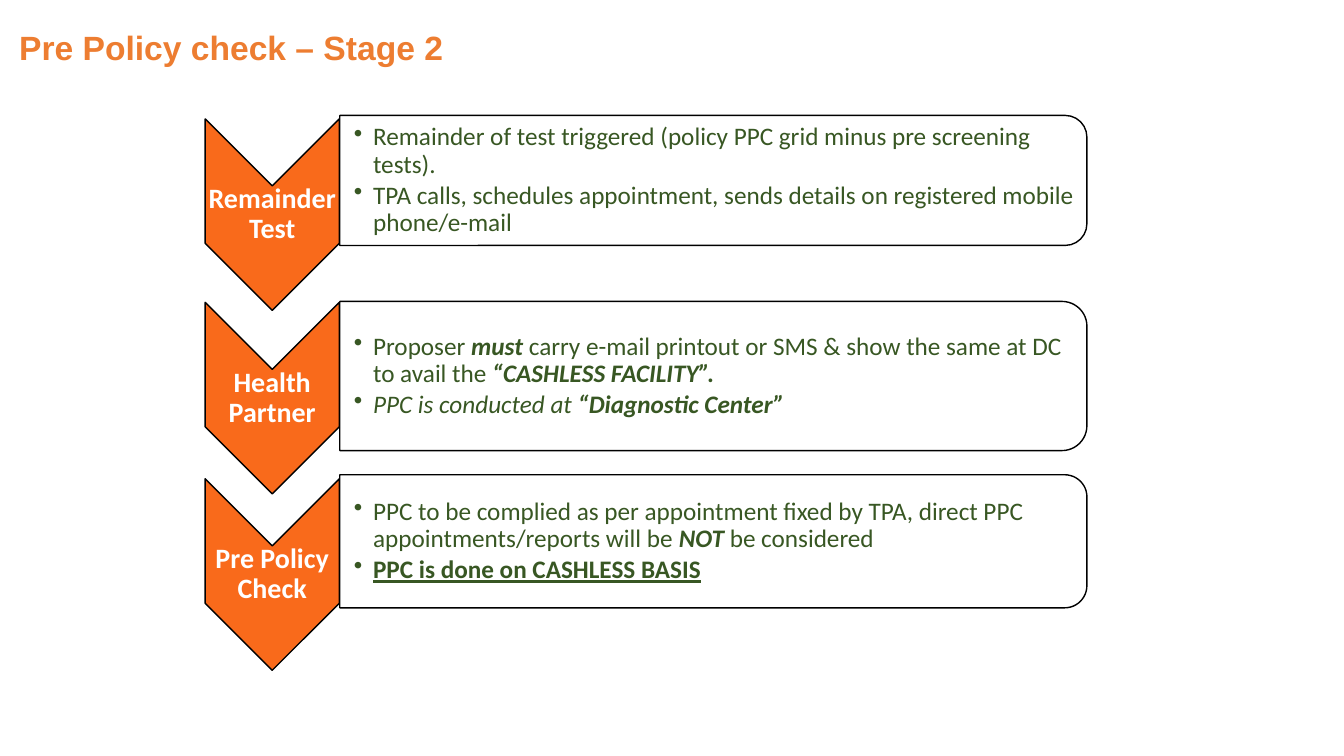
import pptx
import pptx.dml.color
import pptx.enum.shapes
import pptx.enum.text
import pptx.oxml.ns
import pptx.util
from lxml import etree

Inches = pptx.util.Inches
Pt = pptx.util.Pt
RGBColor = pptx.dml.color.RGBColor
MSO_SHAPE = pptx.enum.shapes.MSO_SHAPE
PP_ALIGN = pptx.enum.text.PP_ALIGN

TITLE_ORANGE = RGBColor(0xED, 0x7D, 0x31)
ARROW_ORANGE = RGBColor(0xF9, 0x6A, 0x1B)
TEXT_GREEN = RGBColor(0x38, 0x57, 0x23)
WHITE = RGBColor(0xFF, 0xFF, 0xFF)
BLACK = RGBColor(0, 0, 0)

ARROW_WIDTH, ARROW_HEIGHT = 1.33, 1.9
ARROW_CENTER = 2.7
PANEL_LEFT, PANEL_WIDTH = 3.37, 7.41

# Emphasis marks: b bold, i italic, u underlined.
# Each stage: label, arrow middle, panel middle, panel height, bullets.
STAGES = [
    ("Remainder Test", 2.13, 1.79, 1.29, [
        [("Remainder of test triggered (policy PPC grid minus pre screening tests).", "")],
        [("TPA calls, schedules appointment, sends details on registered mobile phone/e-mail", "")],
    ]),
    ("Health Partner", 3.95, 3.73, 1.48, [
        [("Proposer ", ""), ("must ", "bi"),
         ("carry e-mail printout or SMS & show the same at DC to avail the ", ""),
         ("“CASHLESS FACILITY”.", "bi")],
        [("PPC is conducted at ", "i"), ("“Diagnostic Center”", "bi")],
    ]),
    ("Pre Policy Check", 5.7, 5.37, 1.32, [
        [("PPC to be complied as per appointment fixed by TPA, direct PPC appointments/reports will be ", ""),
         ("NOT ", "bi"), ("be considered", "")],
        [("PPC is done on CASHLESS BASIS", "bu")],
    ]),
]


class StageSlide:
    def __init__(self, slide):
        self.slide = slide

    def style_run(self, run, font, size, color, marks):
        run.font.name = font
        run.font.size = Pt(size)
        run.font.color.rgb = color
        run.font.bold = "b" in marks
        run.font.italic = "i" in marks
        run.font.underline = "u" in marks

    def set_frame(self, frame, left, top, right, bottom):
        """Wrap the text, centre it vertically and set the insets."""
        frame.word_wrap = True
        frame.auto_size = pptx.enum.text.MSO_AUTO_SIZE.NONE
        frame.vertical_anchor = pptx.enum.text.MSO_ANCHOR.MIDDLE
        frame.margin_left, frame.margin_top = Inches(left), Inches(top)
        frame.margin_right, frame.margin_bottom = Inches(right), Inches(bottom)

    def title(self, text):
        title = self.slide.shapes.title
        title.left, title.top = Inches(0.12), Inches(0.14)
        title.width, title.height = Inches(12), Inches(0.7)
        frame = title.text_frame
        frame.text = text
        self.set_frame(frame, 0.07, 0.04, 0.07, 0.04)
        paragraph = frame.paragraphs[0]
        paragraph.alignment = PP_ALIGN.LEFT
        paragraph.line_spacing = 0.9
        self.style_run(paragraph.runs[0], "Arial", 24, TITLE_ORANGE, "b")

    def turned_shape(self, kind, center, middle, width, height, fill):
        """Draw a shape turned a quarter; width and height are as seen."""
        shape = self.slide.shapes.add_shape(
            kind, Inches(center - height / 2), Inches(middle - width / 2),
            Inches(height), Inches(width))
        shape.rotation = 90
        shape.shadow.inherit = False
        shape.fill.solid()
        shape.fill.fore_color.rgb = fill
        shape.line.color.rgb = BLACK
        shape.line.width = Pt(1)

    def text_box(self, left, middle, width, height, inset):
        box = self.slide.shapes.add_textbox(
            Inches(left), Inches(middle - height / 2), Inches(width), Inches(height))
        self.set_frame(box.text_frame, inset, 0.01, 0.01, 0.01)
        return box.text_frame

    def arrow(self, label, middle):
        self.turned_shape(MSO_SHAPE.CHEVRON, ARROW_CENTER, middle,
                          ARROW_WIDTH, ARROW_HEIGHT, ARROW_ORANGE)
        frame = self.text_box(ARROW_CENTER - ARROW_WIDTH / 2, middle, ARROW_WIDTH, 0.57, 0.01)
        frame.text = label
        paragraph = frame.paragraphs[0]
        paragraph.alignment = PP_ALIGN.CENTER
        paragraph.line_spacing = 0.9
        self.style_run(paragraph.runs[0], "Calibri", 20, WHITE, "b")

    def panel(self, middle, height, bullets):
        self.turned_shape(MSO_SHAPE.ROUND_2_SAME_RECTANGLE, PANEL_LEFT + PANEL_WIDTH / 2,
                          middle, PANEL_WIDTH, height, WHITE)
        frame = self.text_box(PANEL_LEFT, middle, PANEL_WIDTH - 0.06, height - 0.13, 0.14)
        for index, pieces in enumerate(bullets):
            paragraph = frame.add_paragraph() if index else frame.paragraphs[0]
            self.bullet(paragraph)
            paragraph.line_spacing = 0.9
            if index:
                paragraph.space_before = Pt(2.7)
            for text, marks in pieces:
                run = paragraph.add_run()
                run.text = text
                self.style_run(run, "Calibri", 18, TEXT_GREEN, marks)

    def bullet(self, paragraph):
        properties = paragraph._p.get_or_add_pPr()
        properties.set("marL", str(Inches(0.19)))
        properties.set("indent", str(-Inches(0.19)))
        etree.SubElement(properties, pptx.oxml.ns.qn("a:buChar"), char="•")


def main():
    presentation = pptx.Presentation()
    presentation.slide_width = Inches(13.33)
    presentation.slide_height = Inches(7.5)
    title_only = presentation.slide_layouts[5]
    page = StageSlide(presentation.slides.add_slide(title_only))
    page.title("Pre Policy check – Stage 2")
    for label, arrow_middle, panel_middle, panel_height, bullets in STAGES:
        page.arrow(label, arrow_middle)
        page.panel(panel_middle, panel_height, bullets)
    presentation.save("out.pptx")


if __name__ == "__main__":
    main()
